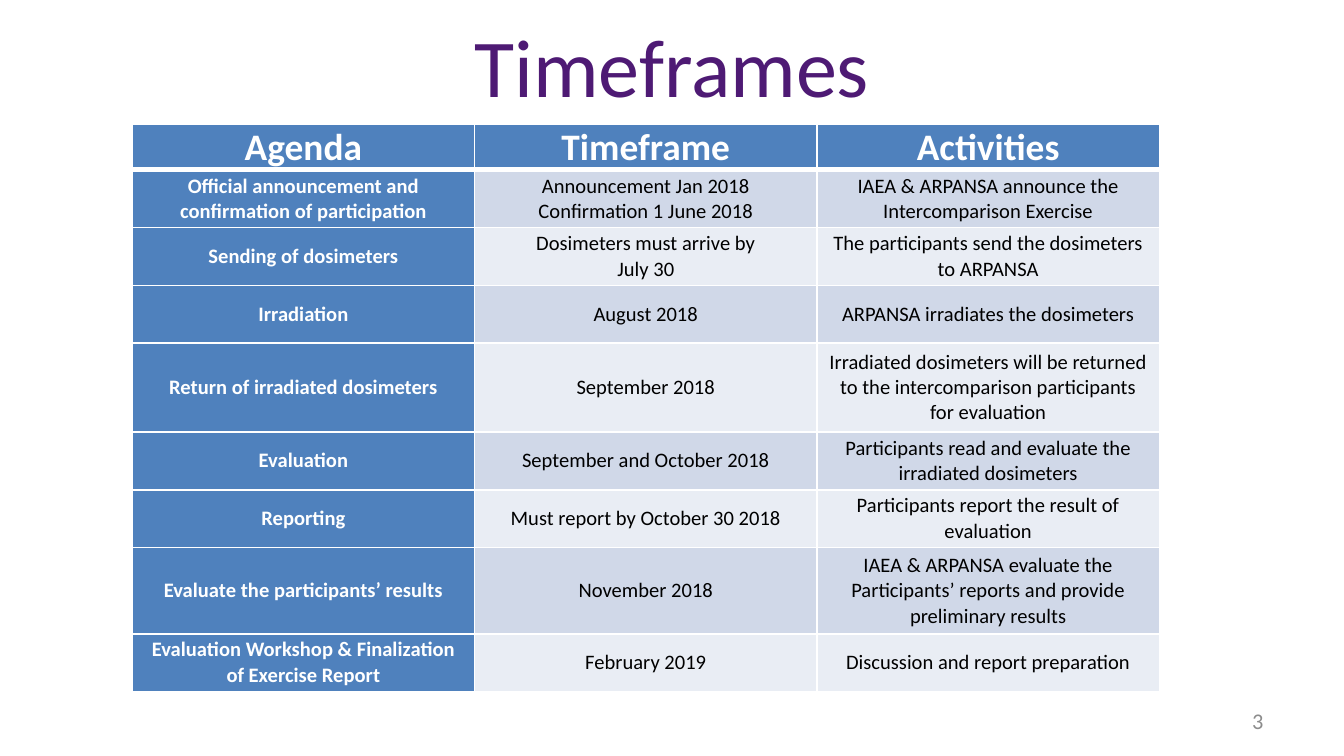
from dataclasses import dataclass

from lxml import etree
from pptx import Presentation
from pptx.dml.color import RGBColor
from pptx.enum.text import MSO_ANCHOR, PP_ALIGN
from pptx.oxml.ns import qn
from pptx.util import Cm, Pt

MID, TOP = MSO_ANCHOR.MIDDLE, MSO_ANCHOR.TOP
MIDST, RIGHT = PP_ALIGN.CENTER, PP_ALIGN.RIGHT


@dataclass(frozen=True)
class Theme:
    font: str = "Calibri"
    purple: str = "4E1A74"
    blue: str = "4F81BD"
    dark: str = "D0D8E8"
    light: str = "E9EDF4"
    white: str = "FFFFFF"
    black: str = "000000"
    gray: str = "8C8C8C"
    title: int = 44
    head: int = 20
    body: int = 11
    foot: int = 12


THEME = Theme()

HEAD = ("Agenda", "Timeframe", "Activities")
STEPS = [
    ("Official announcement and confirmation of participation",
     "Announcement Jan 2018\nConfirmation 1 June 2018",
     "IAEA & ARPANSA announce the Intercomparison Exercise"),
    ("Sending of dosimeters",
     "Dosimeters must arrive by\nJuly 30",
     "The participants send the dosimeters to ARPANSA"),
    ("Irradiation", "August 2018", "ARPANSA irradiates the dosimeters"),
    ("Return of irradiated dosimeters",
     "September 2018",
     "Irradiated dosimeters will be returned to the intercomparison "
     "participants for evaluation"),
    ("Evaluation",
     "September and October 2018",
     "Participants read and evaluate the irradiated dosimeters"),
    ("Reporting",
     "Must report by October 30 2018",
     "Participants report the result of evaluation"),
    ("Evaluate the participants’ results",
     "November 2018",
     "IAEA & ARPANSA evaluate the\n"
     "Participants’ reports and provide preliminary results"),
    ("Evaluation Workshop & Finalization of Exercise Report",
     "February 2019",
     "Discussion and report preparation"),
]
ROWS = (0.86, 1.09, 1.09, 1.09, 1.68, 1.09, 1.09, 1.63, 1.09)
COL = 6.47


def write(frame, text, size, color, align=MIDST, bold=False):
    frame.text = text
    frame.word_wrap = True
    for para in frame.paragraphs:
        para.alignment = align
        for run in para.runs:
            font = run.font
            font.name, font.size, font.bold = THEME.font, Pt(size), bold
            font.color.rgb = RGBColor.from_string(color)


def place(shape, left, top, width, height):
    shape.left, shape.top = Cm(left), Cm(top)
    shape.width, shape.height = Cm(width), Cm(height)


def add_title(slide, text):
    title = slide.shapes.title
    place(title, 1.27, 0.03, 22.86, 2.39)
    write(title.text_frame, text, THEME.title, THEME.purple)
    title.text_frame.vertical_anchor = MID


def add_number(slide, text):
    box = slide.shapes.add_textbox(Cm(18.21), Cm(13.23), Cm(5.92), Cm(0.76))
    write(box.text_frame, text, THEME.foot, THEME.gray, RIGHT)
    box.text_frame.vertical_anchor = MID


def add_edge(cell, side, width):
    props = cell._tc.get_or_add_tcPr()
    line = etree.SubElement(props, qn(f"a:ln{side}"), w=str(Pt(width)))
    fill = etree.SubElement(line, qn("a:solidFill"))
    etree.SubElement(fill, qn("a:srgbClr"), val=THEME.white)


def style_cell(cell, text, row, col):
    head = row == 0
    strong = head or col == 0
    band = THEME.dark if row % 2 else THEME.light
    write(cell.text_frame, text, THEME.head if head else THEME.body,
          THEME.white if strong else THEME.black, bold=strong)
    cell.vertical_anchor = TOP if head else MID
    cell.margin_left = cell.margin_right = Cm(0.18)
    cell.margin_top = cell.margin_bottom = 0
    widths = {"L": 1, "R": 1, "T": 3 if row == 1 else 1, "B": 3 if head else 1}
    for side, width in widths.items():
        add_edge(cell, side, width)
    cell.fill.solid()
    cell.fill.fore_color.rgb = RGBColor.from_string(
        THEME.blue if strong else band)


def add_grid(slide, rows):
    count = len(HEAD)
    table = slide.shapes.add_table(
        len(rows), count, Cm(2.5), Cm(2.35), Cm(COL * count), Cm(sum(ROWS))
    ).table
    for col in table.columns:
        col.width = Cm(COL)
    for i, (texts, height) in enumerate(zip(rows, ROWS)):
        table.rows[i].height = Cm(height)
        for j, text in enumerate(texts):
            style_cell(table.cell(i, j), text, i, j)


def main():
    deck = Presentation()
    deck.slide_width, deck.slide_height = Cm(25.4), Cm(14.28)
    slide = deck.slides.add_slide(deck.slide_layouts[5])
    add_title(slide, "Timeframes")
    add_number(slide, "3")
    add_grid(slide, [HEAD, *STEPS])
    deck.save("out.pptx")


if __name__ == "__main__":
    main()
